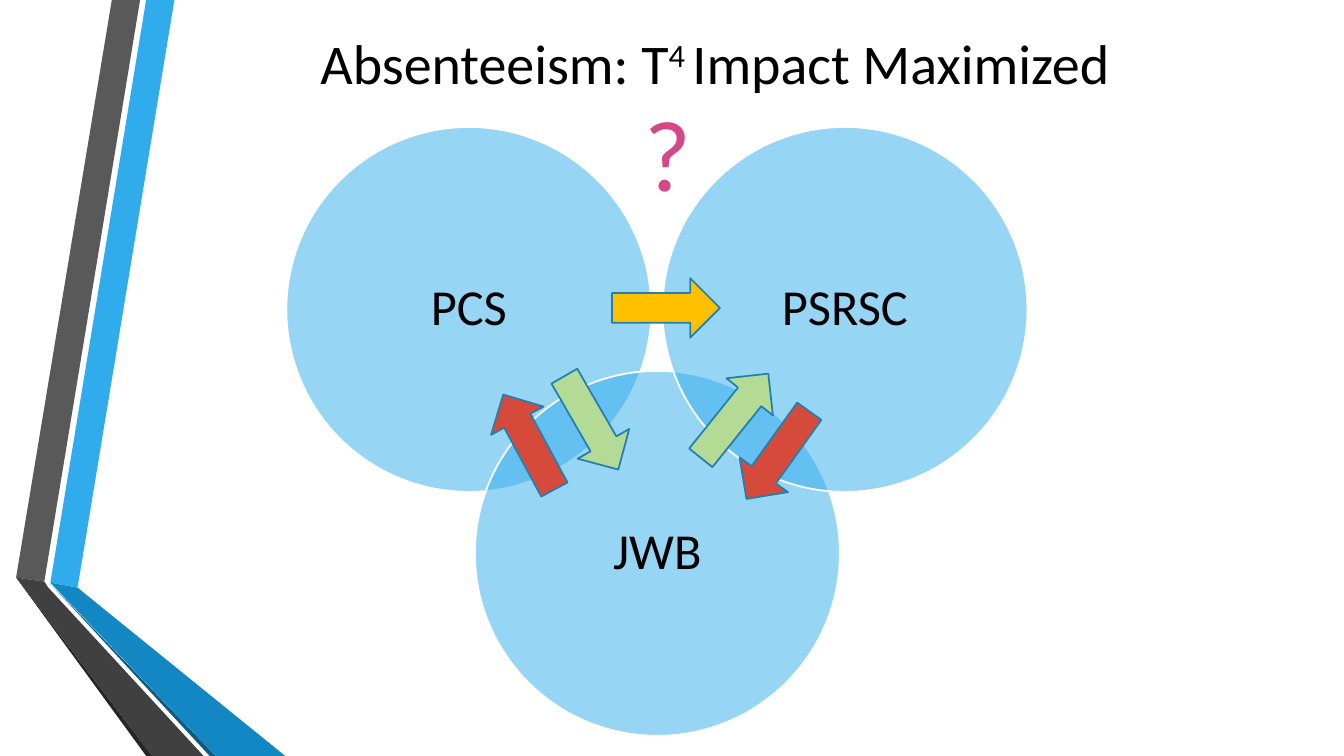
from pptx import Presentation
from pptx.dml.color import RGBColor as RGB
from pptx.enum.shapes import MSO_SHAPE as SHAPE
from pptx.enum.text import MSO_ANCHOR as ANCHOR, PP_ALIGN as ALIGN
from pptx.oxml import parse_xml
from pptx.oxml.ns import nsdecls, qn
from pptx.util import Inches, Pt

WHITE = RGB(0xFF, 0xFF, 0xFF)
BLACK = RGB(0, 0, 0)
SKY = RGB(0x30, 0xAC, 0xEC)
BLUE = RGB(0x12, 0x87, 0xC3)
NAVY = RGB(0x0C, 0x5A, 0x82)
GRAY = RGB(0x59, 0x59, 0x59)
DARK = RGB(0x40, 0x40, 0x40)
COAL = RGB(0x26, 0x26, 0x26)
EDGE = RGB(0x24, 0x7F, 0xAF)
GREEN = RGB(0xB3, 0xDB, 0x95)
RED = RGB(0xD6, 0x4A, 0x3B)
GOLD = RGB(0xFF, 0xC0, 0x00)
PINK = RGB(0xD6, 0x47, 0x87)

BANDS = [
    (SKY, [(0.5, 5.78), (0.77, 5.83), (1.73, 0), (1.45, 0)]),
    (GRAY, [(1.39, 0), (1.11, 0), (0.16, 5.73), (0.44, 5.77)]),
    (COAL, [(0.16, 5.73), (1.45, 7.5), (1.51, 7.5)]),
    (NAVY, [(0.5, 5.79), (2.08, 7.5), (2.14, 7.5)]),
    (BLUE, [(0.5, 5.78), (2.14, 7.5), (2.83, 7.5), (0.77, 5.83)]),
    (DARK, [(2.02, 7.5), (0.48, 5.83), (0.44, 5.77), (0.16, 5.73), (1.51, 7.5)]),
]
CIRCLES = [("PCS", 0, 0), ("JWB", 1.87, 2.42), ("PSRSC", 3.73, 0)]
ARROWS = [
    (4.15, 2.33, 38.7, GREEN),
    (2.73, 2.4, 150, GREEN),
    (2.11, 2.59, 331.7, RED),
    (3.47, 1.26, 90, GOLD),
    (4.58, 2.72, 215.6, RED),
]


def paint(shape, fill, line=None):
    shape.shadow.inherit = False
    shape.fill.solid()
    shape.fill.fore_color.rgb = fill
    if line is None:
        shape.line.fill.background()
    else:
        shape.line.color.rgb = line
        shape.line.width = Pt(1.25)


def style(run, size, color):
    run.font.name = "Calibri"
    run.font.size = Pt(size)
    run.font.color.rgb = color


def draw_bands(slide, left, top):
    for color, points in BANDS:
        spots = [(Inches(left + x), Inches(top + y)) for x, y in points]
        form = slide.shapes.build_freeform(*spots[0])
        form.add_line_segments(spots[1:], close=True)
        paint(form.convert_to_shape(), color)


def draw_venn(slide, left, top, size):
    for name, x, y in CIRCLES:
        disc = slide.shapes.add_shape(
            SHAPE.OVAL, Inches(left + x), Inches(top + y), Inches(size), Inches(size))
        paint(disc, SKY, WHITE)
        tint = disc.fill._xPr.find(qn("a:solidFill"))[0]
        tint.append(parse_xml(f'<a:alpha {nsdecls("a")} val="50000"/>'))
        frame = disc.text_frame
        frame.text = name
        frame.vertical_anchor = ANCHOR.MIDDLE
        para = frame.paragraphs[0]
        para.alignment = ALIGN.CENTER
        para.line_spacing = 0.9
        style(para.runs[0], 36, BLACK)
    for x, y, turn, color in ARROWS:
        arrow = slide.shapes.add_shape(
            SHAPE.UP_ARROW, Inches(left + x), Inches(top + y), Inches(0.59), Inches(1.07))
        arrow.rotation = turn
        paint(arrow, color, EDGE)


def add_text(slide, left, top, width, height, wrap=True):
    box = slide.shapes.add_textbox(
        Inches(left), Inches(top), Inches(width), Inches(height))
    box.text_frame.word_wrap = wrap
    return box.text_frame.paragraphs[0]


def draw_title(slide, left, top, width, height):
    para = add_text(slide, left, top, width, height)
    for text, base in [("Absenteeism: T", 0), ("4 ", 30000), ("Impact Maximized", 0)]:
        run = para.add_run()
        run.text = text
        style(run, 40, BLACK)
        if base:
            run.font._element.set("baseline", str(base))


def draw_query(slide, left, top, width, height):
    para = add_text(slide, left, top, width, height, wrap=False)
    para.text = "?"
    para.alignment = ALIGN.CENTER
    style(para.runs[0], 72, PINK)


def main():
    deck = Presentation()
    deck.slide_width = Inches(13.33)
    deck.slide_height = Inches(7.5)
    slide = deck.slides.add_slide(deck.slide_layouts[6])
    draw_bands(slide, 0, 0)
    draw_venn(slide, 2.84, 1.26, 3.62)
    draw_title(slide, 3.08, 0.23, 8.41, 0.77)
    draw_query(slide, 6.29, 0.85, 0.63, 1.31)
    deck.save("out.pptx")


if __name__ == "__main__":
    main()
